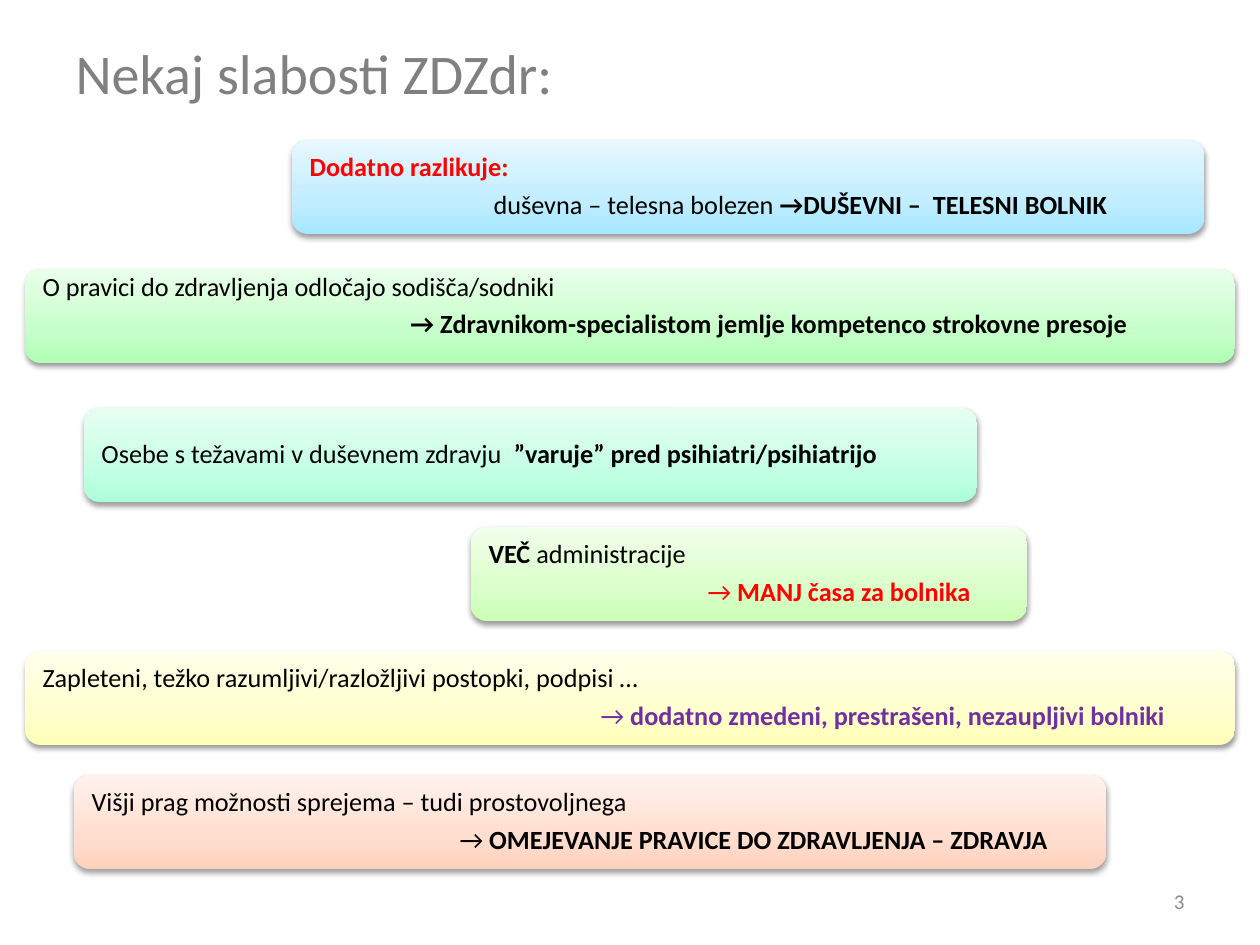
"""Builds the slide on the weak points of ZDZdr."""
import copy
import pptx
import pptx.util
import pptx.dml.color
import pptx.enum.shapes
import pptx.enum.text
import pptx.oxml
import pptx.oxml.ns

SCALE = 914400 / 126
MID = pptx.enum.text.MSO_ANCHOR.MIDDLE
TOP = pptx.enum.text.MSO_ANCHOR.TOP
LEFT = pptx.enum.text.PP_ALIGN.LEFT
RIGHT = pptx.enum.text.PP_ALIGN.RIGHT
BLACK, RED, PURPLE = "000000", "FF0000", "7030A0"
SHADOW = (
    '<a:outerShdw %s blurRad="39370" dist="20320" dir="5400000" rotWithShape="0">'
    '<a:srgbClr val="000000"><a:alpha val="38000"/></a:srgbClr></a:outerShdw>'
    % pptx.oxml.ns.nsdecls("a")
)


def px(*nums):
    return [pptx.util.Emu(round(n * SCALE)) for n in nums]


def add_run(para, text, size, color, bold=False):
    run = para.add_run()
    run.text = text
    run.font.name = "Calibri"
    run.font.size = pptx.util.Pt(size)
    run.font.bold = bold
    run.font.color.rgb = pptx.dml.color.RGBColor.from_string(color)


deck = pptx.Presentation()
deck.slide_width, deck.slide_height = px(1260, 945)
slide = deck.slides.add_slide(deck.slide_layouts[5])

title = slide.shapes.title
title.left, title.top, title.width, title.height = px(63, 38, 1134, 68)
title.text_frame.vertical_anchor = MID
para = title.text_frame.paragraphs[0]
para.alignment = LEFT
add_run(para, "Nekaj slabosti ZDZdr:", 32, "808080")

boxes = [
    (292, 140, 912, MID, ("A7E6FF", "C1EDFF", "E7F8FF"), [
        (0, [("Dodatno razlikuje:", RED, True)]),
        (184, [("duševna – telesna bolezen ", BLACK, False),
               ("→DUŠEVNI –  TELESNI BOLNIK", BLACK, True)])]),
    (84, 408, 893, MID, ("ACFFD9", "C4FFE4", "E8FFF4"), [
        (0, [("Osebe s težavami v duševnem zdravju  ", BLACK, False),
             ("”varuje” pred psihiatri/psihiatrijo", BLACK, True)])]),
    (25, 269, 1210, TOP, ("B0FFB4", "C7FFCA", "EAFFEB"), [
        (0, [("O pravici do zdravljenja odločajo sodišča/sodniki", BLACK, False)]),
        (368, [("→ Zdravnikom-specialistom jemlje kompetenco strokovne presoje",
                BLACK, True)])]),
    (471, 527, 556, MID, ("CCFFB4", "DAFFCA", "F1FFEB"), [
        (0, [("VEČ ", BLACK, True), ("administracije", BLACK, False)]),
        (219, [("→ ", RED, False), ("MANJ časa za bolnika", RED, True)])]),
    (25, 651, 1210, MID, ("FFFFB9", "FFFFCD", "FFFFEC"), [
        (0, [("Zapleteni, težko razumljivi/razložljivi postopki, podpisi …",
              BLACK, False)]),
        (558, [("→", PURPLE, False),
               (" dodatno zmedeni, prestrašeni, nezaupljivi bolniki", PURPLE, True)])]),
    (74, 775, 1032, MID, ("FFD2BD", "FFDED0", "FFF2ED"), [
        (0, [("Višji prag možnosti sprejema – tudi prostovoljnega", BLACK, False)]),
        (368, [("→", BLACK, False),
               (" OMEJEVANJE PRAVICE DO ZDRAVLJENJA – ZDRAVJA", BLACK, True)])]),
]

for left, top, width, anchor, tints, lines in boxes:
    box = slide.shapes.add_shape(
        pptx.enum.shapes.MSO_SHAPE.ROUNDED_RECTANGLE, *px(left, top, width, 94))
    box.line.fill.background()
    box.shadow.inherit = False
    props = box._element.spPr
    props.find(pptx.oxml.ns.qn("a:effectLst")).append(pptx.oxml.parse_xml(SHADOW))

    box.fill.gradient()
    box.fill.gradient_angle = 90
    stops = props.find(".//" + pptx.oxml.ns.qn("a:gsLst"))
    stops.insert(1, copy.deepcopy(stops[0]))
    for stop, tint, place in zip(box.fill.gradient_stops, tints, (0, 0.35, 1)):
        stop.color.rgb = pptx.dml.color.RGBColor.from_string(tint)
        stop.position = place

    frame = box.text_frame
    frame.word_wrap = True
    frame.vertical_anchor = anchor
    frame.margin_left, frame.margin_right = px(13, 13)
    frame.margin_top, frame.margin_bottom = px(0, 0)
    for num, (indent, runs) in enumerate(lines):
        para = frame.add_paragraph() if num else frame.paragraphs[0]
        para.alignment = LEFT
        para.line_spacing = 0.9
        para.space_after = pptx.util.Pt(5.25)
        if indent:
            para._p.get_or_add_pPr().set("marL", str(px(indent)[0]))
        for text, color, bold in runs:
            add_run(para, text, 15, color, bold)

page = slide.shapes.add_textbox(*px(903, 876, 294, 50)).text_frame
page.word_wrap = True
page.vertical_anchor = MID
para = page.paragraphs[0]
para.alignment = RIGHT
add_run(para, "3", 12, "8C8C8C")

deck.save("out.pptx")
